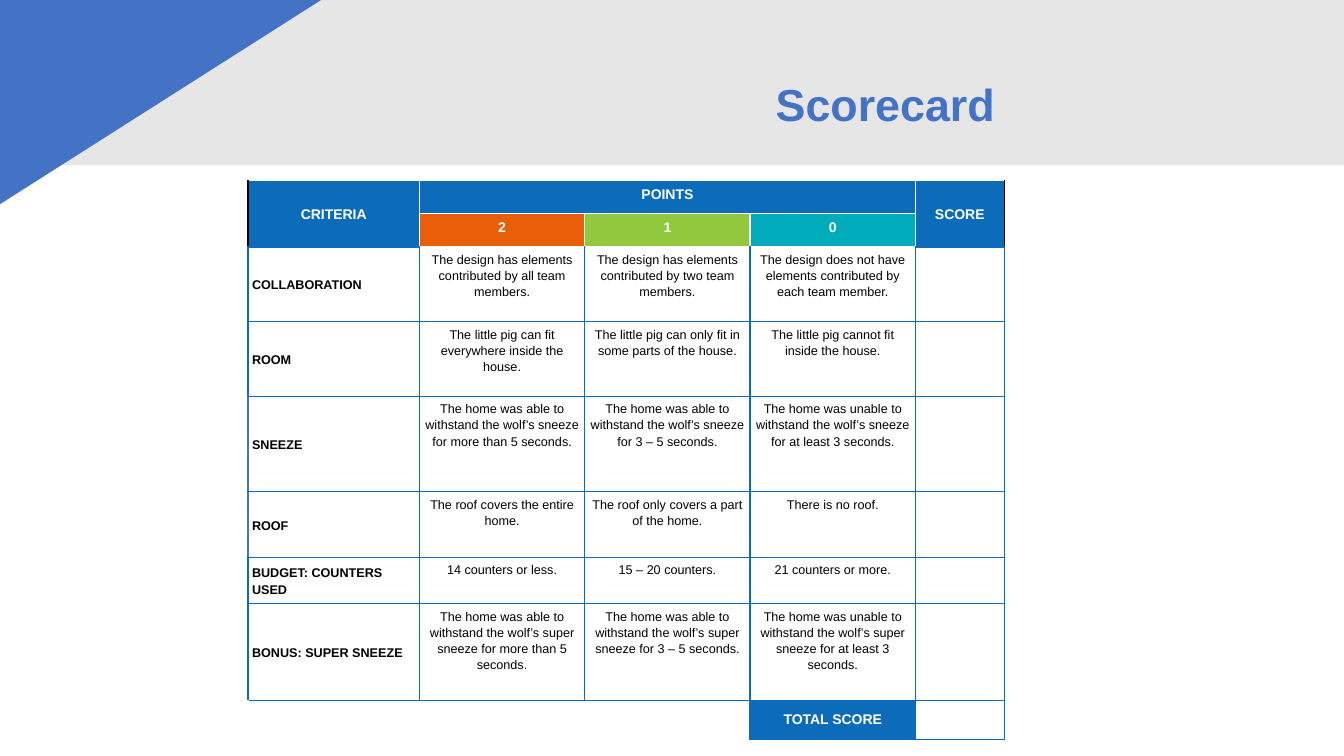
from lxml import etree
from pptx import Presentation
from pptx.dml.color import RGBColor
from pptx.enum.shapes import MSO_SHAPE
from pptx.enum.text import MSO_ANCHOR, PP_ALIGN
from pptx.oxml.ns import qn
from pptx.util import Inches, Pt

LEFT, CENTER, RIGHT = PP_ALIGN.LEFT, PP_ALIGN.CENTER, PP_ALIGN.RIGHT
TOP, MIDDLE = MSO_ANCHOR.TOP, MSO_ANCHOR.MIDDLE
RECTANGLE, TRIANGLE = MSO_SHAPE.RECTANGLE, MSO_SHAPE.RIGHT_TRIANGLE

COLORS = {
    "white": "FFFFFF", "black": "000000", "band": "E7E6E6", "accent": "4472C4",
    "blue": "0D6CB9", "orange": "E95E09", "green": "92C83E", "teal": "00ACBB",
}
FONT = "Arial"
TITLE = "Scorecard"
POINTS = [("2", "orange"), ("1", "green"), ("0", "teal")]
CRITERIA = [
    ("COLLABORATION",
     "The design has elements contributed by all team members.",
     "The design has elements contributed by two team members.",
     "The design does not have elements contributed by each team member."),
    ("ROOM",
     "The little pig can fit everywhere inside the house.",
     "The little pig can only fit in some parts of the house.",
     "The little pig cannot fit inside the house."),
    ("SNEEZE",
     "The home was able to withstand the wolf’s sneeze for more than 5 seconds.",
     "The home was able to withstand the wolf’s sneeze for 3 – 5 seconds.",
     "The home was unable to withstand the wolf’s sneeze for at least 3 seconds."),
    ("ROOF",
     "The roof covers the entire home.",
     "The roof only covers a part of the home.",
     "There is no roof."),
    ("BUDGET: COUNTERS USED",
     "14 counters or less.", "15 – 20 counters.", "21 counters or more."),
    ("BONUS: SUPER SNEEZE",
     "The home was able to withstand the wolf’s super sneeze for more than 5 seconds.",
     "The home was able to withstand the wolf’s super sneeze for 3 – 5 seconds.",
     "The home was unable to withstand the wolf’s super sneeze for at least 3 seconds."),
]
COLUMN_WIDTHS = [1.7, 1.64, 1.64, 1.64, 0.88]
ROW_HEIGHTS = [0.33, 0.33, 0.74, 0.74, 0.95, 0.65, 0.46, 0.96, 0.36]
TOTAL_ROW, SCORE_COL = len(ROW_HEIGHTS) - 1, len(COLUMN_WIDTHS) - 1
MERGES = [((0, 0), (1, 0)), ((0, 1), (0, 3)), ((0, 4), (1, 4)), ((8, 1), (8, 2))]


def rgb(color):
    return RGBColor.from_string(COLORS[color])


def format_text(frame, size, color, bold, align, spacing):
    paragraph = frame.paragraphs[0]
    paragraph.alignment, paragraph.line_spacing = align, spacing
    for run in paragraph.runs:
        run.font.name, run.font.size, run.font.bold = FONT, Pt(size), bold
        run.font.color.rgb = rgb(color)


def add_backdrop(slide, kind, color, left, top, width, height):
    shape = slide.shapes.add_shape(
        kind, Inches(left), Inches(top), Inches(width), Inches(height))
    shape.shadow.inherit = False
    shape.fill.solid()
    shape.fill.fore_color.rgb = rgb(color)
    shape.line.fill.background()
    return shape


def fill_cell(cell, text="", fill="white", size=9, color="black", bold=False,
              align=CENTER, anchor=TOP, spacing=1.15):
    cell.margin_left = cell.margin_right = Inches(0.04)
    cell.margin_top = cell.margin_bottom = Inches(0.04)
    cell.vertical_anchor = anchor
    cell.fill.solid()
    cell.fill.fore_color.rgb = rgb(fill)
    if text:
        cell.text_frame.text = text
        format_text(cell.text_frame, size, color, bold, align, spacing)


def fill_header(cell, text, fill="blue", **style):
    fill_cell(cell, text, fill, size=10, color="white", bold=True, **style)


def set_borders(cell, sides):
    """Draw the four sides; a side without a colour stays empty."""
    properties = cell._tc.get_or_add_tcPr()
    for position, side in enumerate("LRTB"):
        line = etree.Element(qn(f"a:ln{side}"), w=str(Pt(1)))
        if sides[side]:
            solid = etree.SubElement(line, qn("a:solidFill"))
            etree.SubElement(solid, qn("a:srgbClr"), val=COLORS[sides[side]])
        else:
            etree.SubElement(line, qn("a:noFill"))
        properties.insert(position, line)


def border_colors(row, col):
    sides = dict.fromkeys("LRTB", "blue")
    if row < 2:
        sides = dict.fromkeys("LRTB", "white")
        if col in (0, SCORE_COL):
            sides["L" if col == 0 else "R"] = "black"
            sides["B"] = "blue"
    elif row == 2 and 0 < col < SCORE_COL:
        sides["T"] = "white"
    elif row in (4, 5) and col == 0:
        sides["L"] = "accent"
    elif row == TOTAL_ROW and col < 3:
        sides.update(L=None if col else "white", B="white",
                     R="blue" if col == 2 else None)
    return sides


def add_scorecard(slide):
    table = slide.shapes.add_table(
        len(ROW_HEIGHTS), len(COLUMN_WIDTHS), Inches(2.46), Inches(1.79),
        Inches(sum(COLUMN_WIDTHS)), Inches(sum(ROW_HEIGHTS))).table
    table.first_row = table.horz_banding = False
    for column, width in zip(table.columns, COLUMN_WIDTHS):
        column.width = Inches(width)
    for row, height in zip(table.rows, ROW_HEIGHTS):
        row.height = Inches(height)
    for first, last in MERGES:
        table.cell(*first).merge(table.cell(*last))

    for cell in table.iter_cells():
        fill_cell(cell)
    fill_header(table.cell(0, 0), "CRITERIA", anchor=MIDDLE)
    fill_header(table.cell(0, 1), "POINTS")
    fill_header(table.cell(0, SCORE_COL), "SCORE", anchor=MIDDLE)
    for col, (points, fill) in enumerate(POINTS, 1):
        fill_header(table.cell(1, col), points, fill)
    for row, (criterion, *levels) in enumerate(CRITERIA, 2):
        fill_cell(table.cell(row, 0), criterion, bold=True, align=LEFT, anchor=MIDDLE)
        for col, level in enumerate(levels, 1):
            fill_cell(table.cell(row, col), level)
    fill_header(table.cell(TOTAL_ROW, 3), "TOTAL SCORE", anchor=MIDDLE, spacing=1.0)

    for row in range(len(ROW_HEIGHTS)):
        for col in range(len(COLUMN_WIDTHS)):
            set_borders(table.cell(row, col), border_colors(row, col))


def main():
    deck = Presentation()
    deck.slide_width, deck.slide_height = Inches(13.33), Inches(7.5)
    slide = deck.slides.add_slide(deck.slide_layouts[5])

    add_backdrop(slide, RECTANGLE, "band", -0.26, -0.19, 13.59, 1.83)
    corner = add_backdrop(slide, TRIANGLE, "accent", -2.57, -1.72, 8.46, 5.38)
    corner.rotation = 180
    corner._element.spPr.find(qn("a:xfrm")).set("flipH", "1")

    title = slide.shapes.title
    title.left, title.top = Inches(0.27), Inches(0.34)
    title.width, title.height = Inches(9.7), Inches(1.45)
    title.text_frame.text = TITLE
    title.text_frame.vertical_anchor = MIDDLE
    format_text(title.text_frame, 32, "accent", True, RIGHT, 0.9)
    slide.shapes._spTree.append(title._element)  # in front of the band

    add_scorecard(slide)
    deck.save("out.pptx")


if __name__ == "__main__":
    main()
